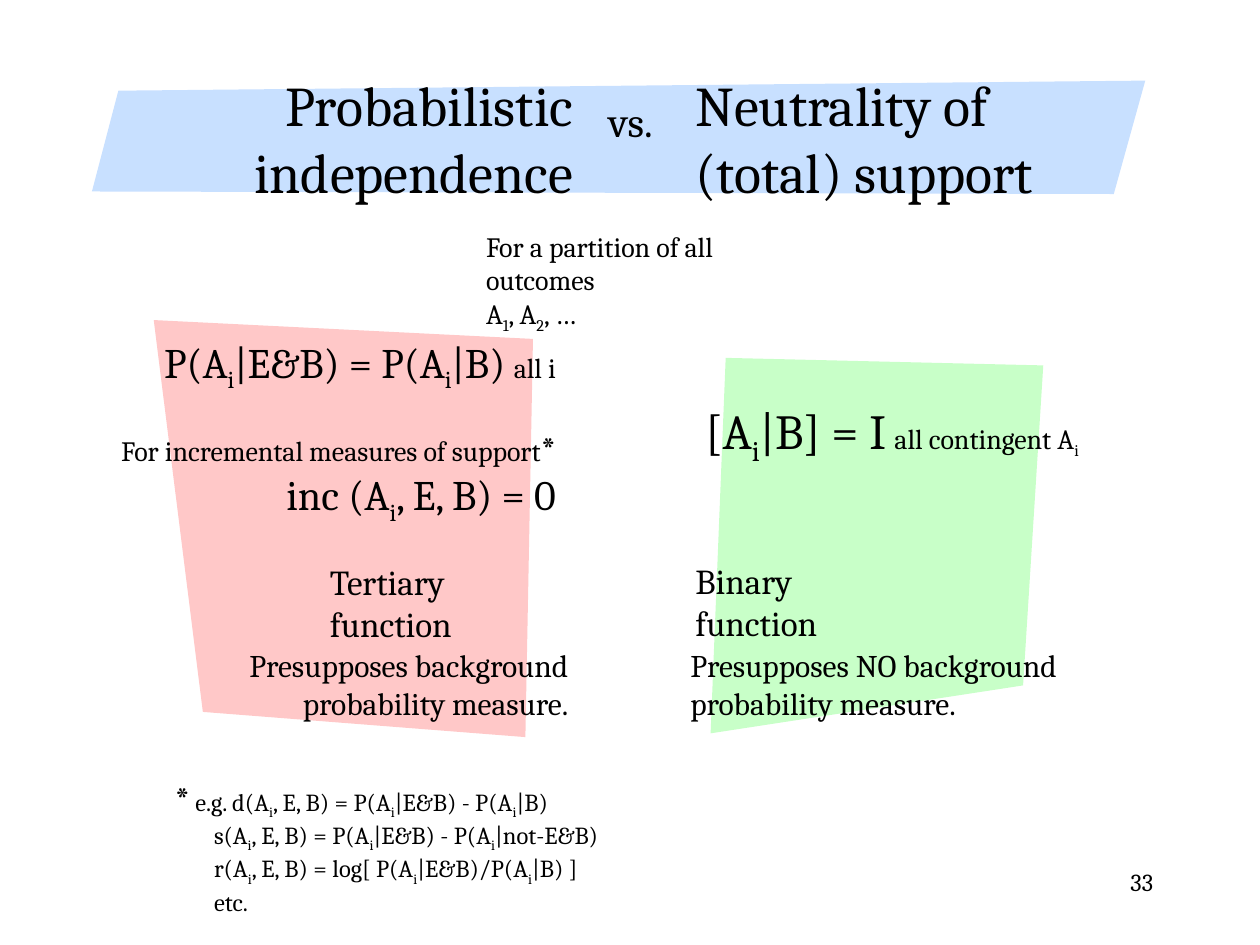
from pptx import Presentation
from pptx.dml.color import RGBColor as Rgb
from pptx.enum.text import MSO_ANCHOR as Anchor, PP_ALIGN as Align
from pptx.util import Inches, Pt

COLS, ROWS = 100, 75


def color(code):
    return Rgb.from_string(code)


def write(par, text, size=16, font="Cambria", ink="000000"):
    """Add text to a paragraph; "_" lowers the next letter, a newline breaks."""
    def put(part, low=False):
        run = par.add_run()
        run.text = part
        run.font.size, run.font.name = Pt(size), font
        run.font.color.rgb = color(ink)
        if low:
            run._r.get_or_add_rPr().set("baseline", "-25000")

    for row, line in enumerate(text.split("\n")):
        if row:
            par.add_line_break()
        head, *rest = line.split("_")
        if head:
            put(head)
        for part in rest:
            put(part[0], low=True)
            if part[1:]:
                put(part[1:])


class Page:
    """Style and current slide, measured on a grid of COLS by ROWS."""

    def __init__(self, deck):
        self.slide = deck.slides.add_slide(deck.slide_layouts[6])
        self.col = deck.slide_width / COLS
        self.row = deck.slide_height / ROWS

    def spot(self, x, y):
        return round(x * self.col), round(y * self.row)

    def patch(self, fill, *points):
        first, *rest = [self.spot(*point) for point in points]
        pen = self.slide.shapes.build_freeform(*first, scale=1.0)
        pen.add_line_segments(rest, close=True)
        shape = pen.convert_to_shape()
        shape.shadow.inherit = False
        shape.fill.solid()
        shape.fill.fore_color.rgb = color(fill)
        shape.line.fill.background()

    def text(self, box, *lines, size=16, align=Align.LEFT, anchor=Anchor.TOP):
        """Each line is a string or a list of (string, size) pairs."""
        frame = self.slide.shapes.add_textbox(
            *self.spot(*box[:2]), *self.spot(*box[2:])).text_frame
        frame.word_wrap, frame.vertical_anchor = True, anchor
        for num, line in enumerate(lines):
            par = frame.add_paragraph() if num else frame.paragraphs[0]
            par.alignment = align
            for part, points in [(line, size)] if isinstance(line, str) else line:
                write(par, part, size=points)
        return frame.paragraphs


def main():
    deck = Presentation()
    deck.slide_width, deck.slide_height = Inches(10), Inches(7.5)
    page = Page(deck)
    right = Align.RIGHT

    # Slide number
    page.text((71.7, 68.3, 20.8, 5), "33", size=14, align=right)

    # Heading band
    page.patch("C8E0FF", (9.4, 7.2), (90.9, 6.4), (88.4, 15.4), (7.3, 15.2))
    page.text((15.2, 5.5, 31.3, 10.8), "Probabilistic\nindependence",
              size=32, align=right, anchor=Anchor.MIDDLE)
    page.text((47.3, 7.1, 5.8, 5), "vs.", size=24)
    page.text((54.2, 5.1, 33.2, 11.7), "Neutrality of (total) support", size=32)
    page.text((37.6, 17.7, 29, 6.4),
              "For a partition of all outcomes", "A_1, A_2, …")

    # Left side: independence
    page.patch("FFC8C8", (12.2, 25.4), (42.3, 26.9), (41.7, 58.5), (16.1, 56.5))
    rules = page.text(
        (6.9, 26.2, 38.2, 15),
        [("P(A_i|E&B) = P(A_i|B)", 24), (" ", 22), ("all i", 16)],
        [("For incremental measures of support", 16), ("*", 20)],
        [("inc (A_i, E, B) = 0", 24)],
        align=right)
    rules[1].space_before = Pt(19)
    notes = page.text(
        (12.9, 61.1, 40.9, 11.3),
        [("*", 20),
         (" e.g. d(A_i, E, B) = P(A_i|E&B) - P(A_i|B)\n"
          "s(A_i, E, B) = P(A_i|E&B) - P(A_i|not-E&B)\n"
          "r(A_i, E, B) = log[ P(A_i|E&B)/P(A_i|B) ]\n"
          "etc.", 14)])
    indent = Inches(0.31)
    props = notes[0]._p.get_or_add_pPr()
    props.set("marL", str(indent))
    props.set("indent", str(-indent))
    page.text((25.2, 44, 20.9, 4.3), "Tertiary function", size=20)
    page.text((12.5, 50.8, 33.6, 7),
              "Presupposes background probability measure.",
              size=18, align=right)

    # Right side: neutrality
    page.patch("C8FFC8", (56.4, 58.2), (57.6, 28.4), (82.8, 29), (81.2, 54.4))
    page.text((55, 31.3, 35.1, 5.7),
              [("[A_i|B] = I", 28), (" ", 22), ("all contingent A_i", 16)])
    page.text((54.2, 43.9, 19.5, 4.3), "Binary function", size=20)
    page.text((53.8, 50.8, 39.9, 7),
              "Presupposes NO background probability measure.", size=18)

    deck.save("out.pptx")


if __name__ == "__main__":
    main()
